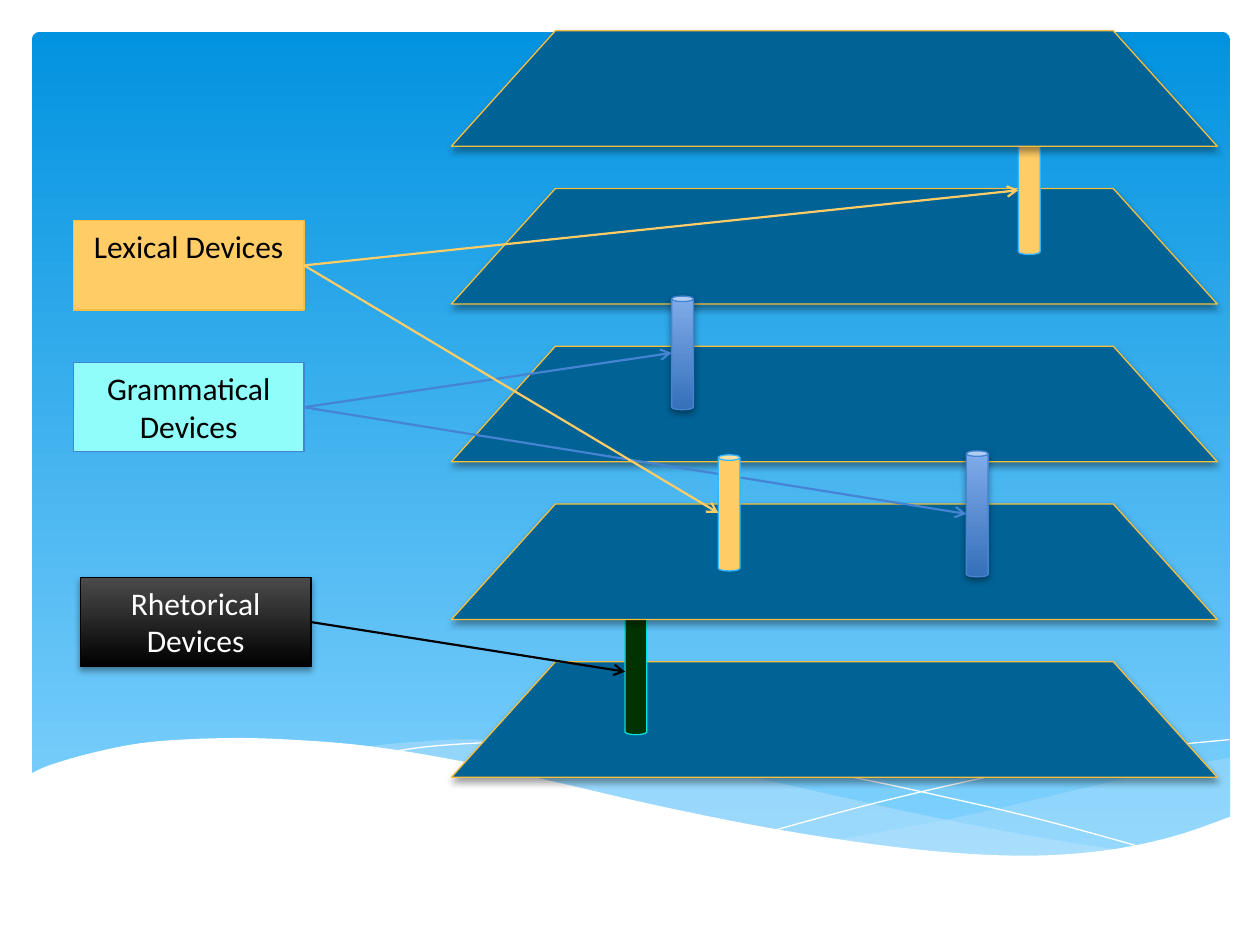
from lxml.etree import SubElement
from pptx import Presentation
from pptx.dml.color import RGBColor
from pptx.enum.shapes import MSO_CONNECTOR as Connector, MSO_SHAPE as Preset
from pptx.enum.text import MSO_ANCHOR as Anchor, PP_ALIGN as Align
from pptx.oxml.ns import qn
from pptx.util import Cm, Pt

COLORS = {
    "sky_top": "0293E0", "sky_bottom": "83D3FE", "wave": "C6E7FC", "white": "FFFFFF",
    "black": "000000", "charcoal": "4B4B4B", "layer": "016296", "gold": "F5C040",
    "amber": "FFCC66", "bright_blue": "31B6FD", "cyan": "91FDFA", "blue": "4584D3",
    "light_blue": "80ACEA", "dark_blue": "3570BA", "green": "003300", "teal": "05E0DB",
}
FONT = {"name": "Calibri", "size": Pt(18)}
FRAME = {"word_wrap": True, "vertical_anchor": Anchor.TOP}
LAYER_TOPS = [0.62 + 3.18 * step for step in range(5)]
BOX_WIDTH, BOX_HEIGHT, PILLAR_WIDTH = 4.65, 1.8, 0.44

RIGHT_WAVE = [
    [(24.82, 15.27), (23.42, 15.52), (21.89, 15.88), (19.15, 16.51), (16.81, 16.94)],
    [(16.81, 16.94), (18.26, 17.12), (19.86, 17.25), (21.46, 17.25), (22.81, 17.07),
     (23.8, 16.84), (24.82, 16.48)],
]
LONG_WAVE = [
    [(22.71, 17.15), (21.29, 16.94), (18.85, 16.48), (16, 15.85), (13.77, 15.34),
     (11.81, 15.06), (9.65, 14.91), (8.33, 14.96), (7.29, 15.06)],
    [(7.29, 15.06), (9.22, 15.34), (11.43, 15.85), (14.4, 16.51), (16.92, 16.97),
     (19.02, 17.22), (20.8, 17.27), (22.71, 17.15)],
]
FALLING_LINE = [
    [(7.87, 15.16), (8.74, 15.04), (10.21, 14.96), (11.91, 14.99), (14.15, 15.19),
     (16.92, 15.62), (19.33, 16.13), (21.13, 16.56), (23.06, 17.09)],
]
RISING_LINE = [
    [(15.6, 16.74), (17.68, 16.18), (19.74, 15.7), (22.02, 15.24), (23.5, 15.04),
     (24.79, 14.91)],
]
FOREGROUND = [
    [(24.82, 16.46), (23.62, 16.87), (22.23, 17.15), (20.55, 17.25), (18.44, 17.12),
     (15.9, 16.76), (13.44, 16.28), (11.35, 15.8), (9.27, 15.34), (7.42, 15.04),
     (5.84, 14.91), (4.5, 14.88), (3.02, 14.96), (1.93, 15.16), (1.02, 15.42),
     (0.58, 15.62)],
    [(0.58, 18.57), (24.82, 18.57)],
]

DEVICES = {
    "rhetorical": {
        "lines": ["Rhetorical", "Devices"], "box": (1.62, 11.64),
        "box_fill": ("charcoal", "black"), "box_line": "black", "text": "white",
        "box_shadow": True, "arrow": "black", "pillars": [(12.6, 12.27, 2.54)],
        "pillar_fill": ("green",), "pillar_line": "teal", "pillar_shadow": False,
    },
    "grammatical": {
        "lines": ["Grammatical", "Devices"], "box": (1.48, 7.31),
        "box_fill": ("cyan",), "box_line": "blue", "text": "black",
        "box_shadow": False, "arrow": "blue",
        "pillars": [(19.48, 9.09, 2.54), (13.54, 5.97, 2.29)],
        "pillar_fill": ("light_blue", "dark_blue"), "pillar_line": "blue",
        "pillar_shadow": True,
    },
    "lexical": {
        "lines": ["Lexical Devices"], "box": (1.48, 4.45),
        "box_fill": ("amber",), "box_line": "gold", "text": "black",
        "box_shadow": False, "arrow": "amber",
        "pillars": [(14.48, 9.17, 2.34), (20.53, 2.54, 2.59)],
        "pillar_fill": ("amber",), "pillar_line": "bright_blue", "pillar_shadow": False,
    },
}


def color(name):
    """Return the named colour."""
    return RGBColor.from_string(COLORS[name])


def set_values(target, values):
    """Set each attribute of a target from a dict."""
    for name, value in values.items():
        setattr(target, name, value)


def paint(shape, fill=(), line=None, width=0.75, shadow=False):
    """Give a shape its flat or vertical gradient fill, its line and its shadow."""
    shape.shadow.inherit = False
    if len(fill) == 2:
        shape.fill.gradient()
        shape.fill.gradient_angle = 270
        for stop, name in zip(shape.fill.gradient_stops, fill):
            stop.color.rgb = color(name)
    elif fill:
        shape.fill.solid()
        shape.fill.fore_color.rgb = color(fill[0])
    else:
        shape.fill.background()
    if line:
        shape.line.color.rgb = color(line)
        shape.line.width = Pt(width)
    else:
        shape.line.fill.background()
    if shadow:
        effects = shape._element.spPr.find(qn("a:effectLst"))
        outer = SubElement(effects, qn("a:outerShdw"), blurRad=str(Pt(4)),
                           dist=str(Pt(2)), dir="5400000", rotWithShape="0")
        tint = SubElement(outer, qn("a:srgbClr"), val=COLORS["black"])
        SubElement(tint, qn("a:alpha"), val="38000")


def add_preset(slide, preset, bounds, adjustment=None, **look):
    """Add a painted preset shape with bounds in centimetres."""
    shape = slide.shapes.add_shape(preset, *map(Cm, bounds))
    if adjustment is not None:
        shape.adjustments[0] = adjustment
    paint(shape, **look)
    return shape


def smooth(knots, steps=6):
    """Return points on a Catmull-Rom curve through the knots."""
    padded = [knots[0], *knots, knots[-1]]
    points = [knots[0]]
    for a, b, c, d in zip(padded, padded[1:], padded[2:], padded[3:]):
        for t in (step / steps for step in range(1, steps + 1)):
            points.append(tuple(
                q + t * (r - p) / 2 + t**2 * (2 * p - 5 * q + 4 * r - s) / 2
                + t**3 * (3 * q - p - 3 * r + s) / 2
                for p, q, r, s in zip(a, b, c, d)))
    return points


def add_curve(slide, edges, closed=True, alpha=None, **look):
    """Add a freeform made of smooth edges."""
    points = [(Cm(x), Cm(y)) for edge in edges for x, y in smooth(edge)]
    builder = slide.shapes.build_freeform(*points[0])
    builder.add_line_segments(points[1:], close=closed)
    shape = builder.convert_to_shape()
    paint(shape, **look)
    if alpha:
        tint = shape._element.spPr.find(qn("a:solidFill")).find(qn("a:srgbClr"))
        SubElement(tint, qn("a:alpha"), val=str(alpha * 1000))


def add_arrow(slide, start, end, name):
    """Add a straight arrow between two points."""
    arrow = slide.shapes.add_connector(Connector.STRAIGHT, *map(Cm, (*start, *end)))
    arrow.line.color.rgb = color(name)
    arrow.line.width = Pt(1.25)
    SubElement(arrow.line._get_or_add_ln(), qn("a:tailEnd"), type="arrow")
    SubElement(arrow._element.spPr, qn("a:effectLst"))


def add_background(slide):
    """Add the sky and its waves."""
    add_preset(slide, Preset.ROUNDED_RECTANGLE, (0.64, 0.64, 24.16, 16.76), 0.01,
               fill=("sky_top", "sky_bottom"))
    add_curve(slide, RIGHT_WAVE, alpha=29, fill=("wave",))
    add_curve(slide, LONG_WAVE, alpha=40, fill=("wave",))
    for edges in (FALLING_LINE, RISING_LINE):
        add_curve(slide, edges, closed=False, line="white", width=0)
    add_curve(slide, FOREGROUND, fill=("white",))


def add_layer(slide, top):
    """Add one trapezoid layer."""
    add_preset(slide, Preset.TRAPEZOID, (9.1, top, 15.44, 2.33), 0.9,
               fill=("layer",), line="gold", shadow=True)


def add_device(slide, device):
    """Add a labelled box, its pillars and the arrows joining them."""
    left, top = device["box"]
    box = add_preset(slide, Preset.RECTANGLE, (left, top, BOX_WIDTH, BOX_HEIGHT),
                     fill=device["box_fill"], line=device["box_line"],
                     shadow=device["box_shadow"])
    set_values(box.text_frame, FRAME)
    box.text_frame.text = "\n".join(device["lines"])
    for paragraph in box.text_frame.paragraphs:
        paragraph.alignment = Align.CENTER
        for run in paragraph.runs:
            set_values(run.font, FONT)
            run.font.color.rgb = color(device["text"])
    for x, y, height in device["pillars"]:
        add_preset(slide, Preset.CAN, (x, y, PILLAR_WIDTH, height),
                   fill=device["pillar_fill"], line=device["pillar_line"],
                   shadow=device["pillar_shadow"])
    for x, y, height in device["pillars"]:
        add_arrow(slide, (left + BOX_WIDTH, top + BOX_HEIGHT / 2),
                  (x, y + height / 2), device["arrow"])


def main():
    """Build and save the slide."""
    presentation = Presentation()
    set_values(presentation, {"slide_width": Cm(25.4), "slide_height": Cm(19.05)})
    slide = presentation.slides.add_slide(presentation.slide_layouts[6])
    add_background(slide)
    add_layer(slide, LAYER_TOPS[4])
    add_device(slide, DEVICES["rhetorical"])
    for top in LAYER_TOPS[3:0:-1]:
        add_layer(slide, top)
    add_device(slide, DEVICES["grammatical"])
    add_device(slide, DEVICES["lexical"])
    add_layer(slide, LAYER_TOPS[0])
    presentation.save("out.pptx")


if __name__ == "__main__":
    main()
